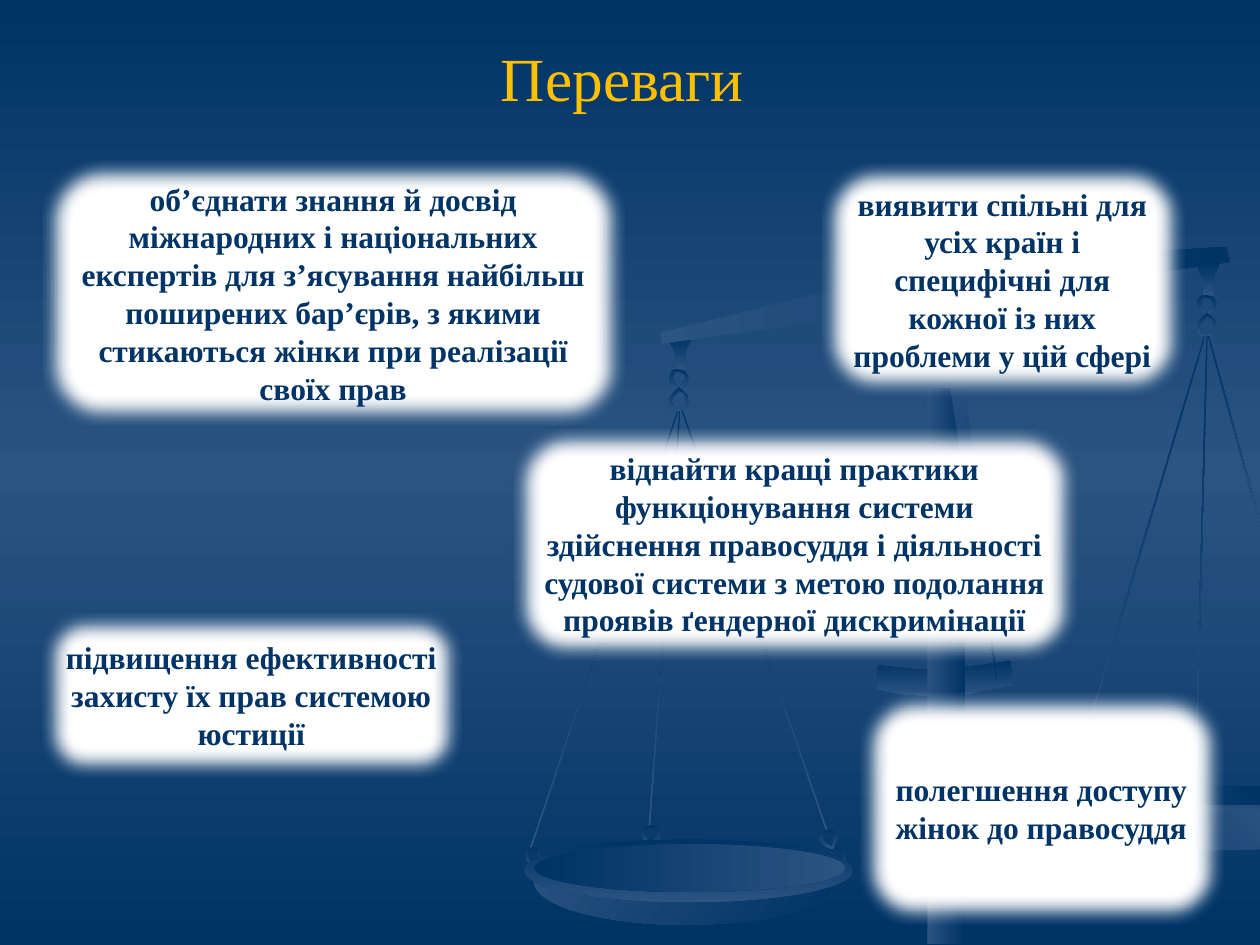
from copy import deepcopy
from dataclasses import dataclass

from lxml import etree
from pptx import Presentation
from pptx.dml.color import RGBColor
from pptx.enum import shapes, text
from pptx.oxml.ns import qn
from pptx.util import Pt

UNIT = 0.72  # points in one step of the scales' drawing grid
KIND = shapes.MSO_SHAPE


@dataclass
class Theme:
    navy: str = "003366"
    steel: str = "2B5481"
    gold: str = "FFC000"
    white: str = "FFFFFF"
    edge: str = "264B71"
    font: str = "Times New Roman"
    head: int = 35
    size: int = 18
    soft: int = 10


def grid(*vals):
    return [Pt(v * UNIT) for v in vals]


class Deck:
    def __init__(self, theme):
        self.theme = theme
        self.prs = Presentation()
        self.prs.slide_width, self.prs.slide_height = Pt(720), Pt(540)
        self.slide = self.prs.slides.add_slide(self.prs.slide_layouts[5])
        self.scales = self.slide.shapes.add_group_shape().shapes

    def blend(self, fill, ang, first, last):
        """Linear gradient; ang runs clockwise in degrees."""
        fill.gradient()
        fill.gradient_angle = -ang % 360
        for stop, color, pos in zip(fill.gradient_stops, (first, last), (0, 1)):
            stop.color.rgb = RGBColor.from_string(color)
            stop.position = pos

    def backdrop(self):
        t = self.theme
        self.blend(self.slide.background.fill, 90, t.navy, t.navy)
        stops = self.slide.element.find(".//" + qn("a:gsLst"))
        mid = deepcopy(stops[0])
        mid.set("pos", "50000")
        mid[0].set("val", t.steel)
        stops.insert(1, mid)

    def metal(self, shape, ang, light=False):
        """Paint a piece of the scales; light puts the pale end first."""
        ends = [self.theme.navy, self.theme.steel]
        self.blend(shape.fill, ang, *(ends[::-1] if light else ends))
        shape.line.fill.background()
        shape.shadow.inherit = False

    def piece(self, kind, area, ang=90, light=False, turn=0):
        shape = self.scales.add_shape(kind, *grid(*area))
        shape.rotation = turn
        self.metal(shape, ang, light)

    def form(self, loops, ang=90, light=False, dx=0, dy=0):
        """Closed outline; loops after the first are holes."""
        moved = [[(x + dx, y + dy) for x, y in loop] for loop in loops]
        pen = self.scales.build_freeform(*moved[0][0], scale=Pt(UNIT))
        pen.add_line_segments(moved[0][1:])
        for loop in moved[1:]:
            pen.move_to(*loop[0])
            pen.add_line_segments(loop[1:])
        self.metal(pen.convert_to_shape(), ang, light)

    def style(self, shape, words, size, color, bold):
        frame = shape.text_frame
        frame.word_wrap = True
        frame.vertical_anchor = text.MSO_ANCHOR.MIDDLE
        para = frame.paragraphs[0]
        para.text = words
        para.alignment = text.PP_ALIGN.CENTER
        font = para.font
        font.name, font.size, font.bold = self.theme.font, Pt(size), bold
        font.color.rgb = RGBColor.from_string(color)

    def title(self, words, area):
        shape = self.slide.shapes.title
        shape.left, shape.top, shape.width, shape.height = map(Pt, area)
        self.style(shape, words, self.theme.head, self.theme.gold, False)

    def card(self, words, area):
        t = self.theme
        shape = self.slide.shapes.add_shape(KIND.ROUNDED_RECTANGLE, *map(Pt, area))
        shape.fill.solid()
        shape.fill.fore_color.rgb = RGBColor.from_string(t.white)
        shape.line.color.rgb = RGBColor.from_string(t.edge)
        shape.line.width = Pt(2)
        shape.shadow.inherit = False
        glow = shape.element.spPr.find(qn("a:effectLst"))
        etree.SubElement(glow, qn("a:softEdge"), rad=str(Pt(t.soft)))
        self.style(shape, words, t.size, t.navy, True)


# Left, top, length and turn of each string
STRINGS = [(904, 260, 360, 16.6), (953, 266, 347, 1.5), (979, 264, 153, 344.6),
           (598, 315, 353, 341), (479, 316, 368, 18.6), (527, 325, 331, 4.2)]

COLLAR = [[(697, 528), (724, 531), (739, 531), (757, 530), (778, 528), (802, 524),
           (804, 544), (782, 548), (768, 551), (751, 552), (733, 552), (714, 551),
           (696, 547)]]
RIM = [[(958, 624), (897, 624), (875, 623), (846, 624), (831, 626), (827, 628),
        (830, 632), (842, 636), (863, 639), (894, 642), (935, 644), (1000, 645),
        (1000, 626), (980, 626)]]
BOWL = [[(831, 633), (835, 642), (842, 649), (852, 657), (865, 663), (882, 668),
         (903, 672), (928, 674), (957, 675), (1000, 674), (1000, 643), (953, 643),
         (918, 642), (886, 640), (857, 637)]]
INSIDE = [[(956, 623), (862, 623), (843, 626), (834, 628), (843, 631), (863, 634),
           (893, 637), (933, 638), (1000, 639), (1000, 624), (979, 624)]]
BEAM = [[(973, 196), (976, 208), (525, 273), (524, 264), (737, 212), (759, 209)]]
NEEDLE = [[(791, 539), (750, 280), (750, 276), (748, 268), (760, 265), (761, 274),
           (763, 277)]]

HOOK = [[(549, 268), (531, 270), (536, 280), (536, 294), (544, 294), (544, 279)]]
LINK = [[(539, 310), (544, 306), (546, 302), (547, 300), (546, 298), (543, 294),
         (538, 293), (535, 293), (533, 295), (531, 300), (533, 305), (536, 308)],
        [(539, 295), (543, 297), (544, 300), (544, 302), (539, 307), (536, 305),
         (534, 299), (536, 295)]]
RING = [[(531, 323), (533, 325), (535, 326), (540, 326), (545, 324), (547, 319),
         (546, 314), (543, 311), (539, 307), (535, 311), (532, 315), (531, 318)],
        [(533, 318), (534, 315), (539, 310), (543, 312), (544, 315), (545, 319),
         (545, 322), (543, 324), (538, 325), (534, 323)]]
LEFT = [[(429, 688), (429, 678), (427, 674), (423, 672), (419, 674), (417, 678),
         (418, 683), (422, 686), (426, 688)],
        [(421, 675), (426, 675), (427, 680), (427, 686), (421, 684), (419, 681),
         (419, 677)]]
RIGHT = [[(661, 674), (663, 669), (665, 665), (663, 661), (660, 658), (655, 659),
          (651, 663), (650, 665), (651, 668), (654, 671), (658, 673)],
         [(657, 661), (660, 661), (662, 664), (661, 670), (660, 672), (655, 669),
          (653, 665), (654, 663)]]

CARDS = [
    ("об’єднати знання й досвід міжнародних і національних експертів для "
     "з’ясування найбільш поширених бар’єрів, з якими стикаються жінки при "
     "реалізації своїх прав", (23, 90.7, 334.8, 153.4)),
    ("підвищення ефективності захисту їх прав системою юстиції",
     (23, 349.2, 241.2, 95.8)),
    ("виявити спільні для усіх країн і специфічні для кожної із них проблеми "
     "у цій сфері", (468, 92.2, 209.5, 134.6)),
    ("полегшення доступу жінок до правосуддя", (490.3, 394.6, 209.5, 134.6)),
    ("віднайти кращі практики функціонування системи здійснення правосуддя і "
     "діяльності судової системи з метою подолання проявів ґендерної "
     "дискримінації", (292.3, 243.4, 323.3, 134.6)),
]


def balance(deck):
    """Draw the scales of justice from back to front."""
    for x, y, size, turn in STRINGS:
        deck.piece(KIND.RECTANGLE, (x, y, 1, size), turn=turn)
    deck.form(COLLAR)
    deck.form(RIM)
    deck.form(BOWL, 315)
    deck.form(INSIDE, 0, True)
    for dx, dy in ((0, 0), (419, -59)):
        for loops in (HOOK, LINK, RING):
            deck.form(loops, dx=dx, dy=dy)
    deck.form(BEAM, 0, True)
    deck.form(LINK, dx=-22, dy=362)
    deck.form(RING, dx=125, dy=365)
    deck.form(LEFT)
    deck.piece(KIND.OVAL, (424, 666, 240, 68), 45, True)
    deck.piece(KIND.OVAL, (416, 666, 261, 50))
    deck.piece(KIND.OVAL, (424, 670, 247, 38), 0)
    deck.form(RIGHT)
    deck.piece(KIND.RECTANGLE, (736, 308, 30, 441), 0, True)
    deck.form(NEEDLE, 45, True)


def main():
    deck = Deck(Theme())
    deck.backdrop()
    balance(deck)
    deck.title("Переваги ", (36, 20.9, 648, 46.1))
    for words, area in CARDS:
        deck.card(words, area)
    deck.prs.save("out.pptx")


if __name__ == "__main__":
    main()
